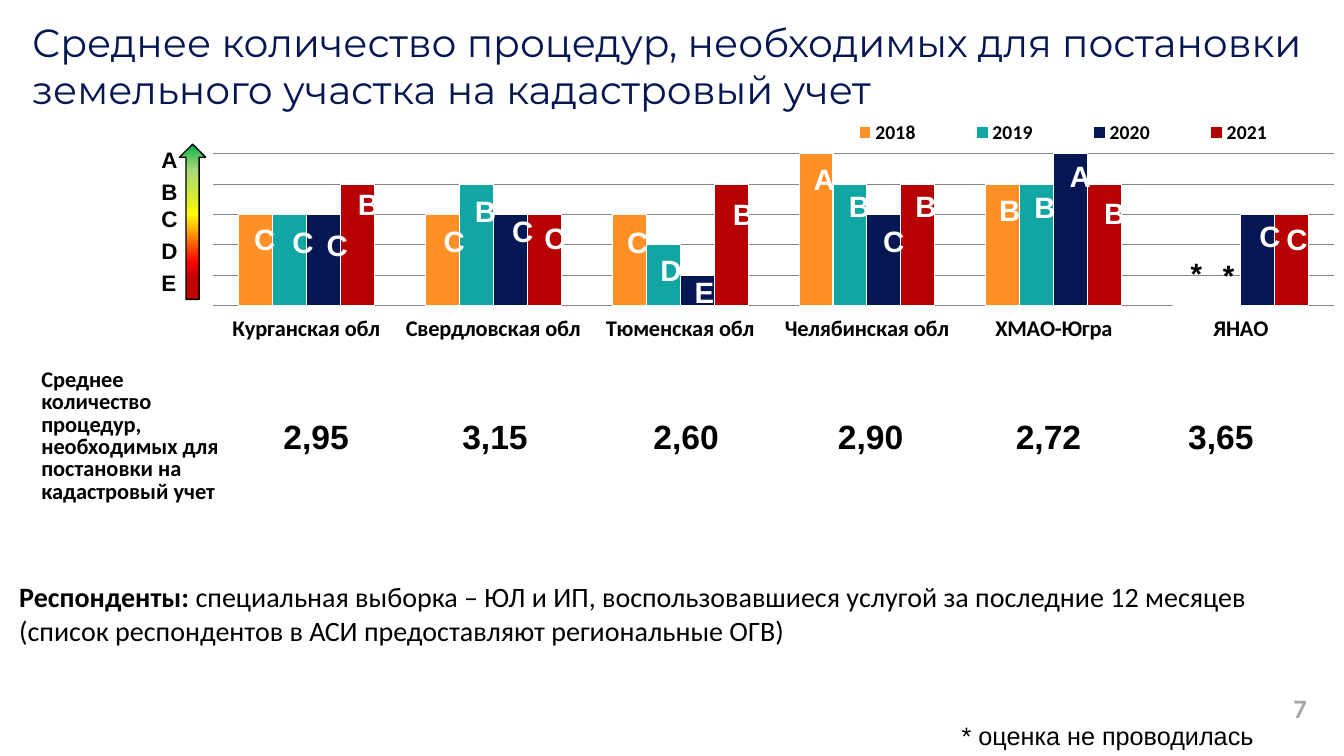
from lxml.etree import SubElement
from pptx import Presentation
from pptx.chart.data import CategoryChartData
from pptx.dml.color import RGBColor
from pptx.enum.chart import XL_CHART_TYPE, XL_LEGEND_POSITION, XL_TICK_LABEL_POSITION, XL_TICK_MARK
from pptx.enum.shapes import MSO_SHAPE
from pptx.enum.text import MSO_ANCHOR, PP_ALIGN
from pptx.oxml import parse_xml
from pptx.oxml.ns import nsdecls, qn
from pptx.util import Pt

PX = 9144  # 100 px to the inch
BLACK = RGBColor(0, 0, 0)
WHITE = RGBColor(255, 255, 255)
GRAY = RGBColor(0xA6, 0xA6, 0xA6)
GRID = RGBColor(0x86, 0x86, 0x86)
NAVY = RGBColor(0x04, 0x17, 0x52)
ORANGE = RGBColor(0xFF, 0x90, 0x28)
TEAL = RGBColor(0x10, 0xA6, 0xA4)
RED = RGBColor(0xB7, 0x00, 0x02)

deck = Presentation()
deck.slide_width, deck.slide_height = 1333 * PX, 750 * PX
slide = deck.slides.add_slide(deck.slide_layouts[6])
shapes = slide.shapes


def write(text, box=None, cell=None, size=16, font="Arial", color=BLACK, bold=False,
          align=PP_ALIGN.LEFT, anchor=MSO_ANCHOR.TOP, pad=(13, 7), lead=None):
    """Put text in a new box or a table cell; text before a bar is bold."""
    if cell is None:
        frame = shapes.add_textbox(*[n * PX for n in box]).text_frame
        frame.word_wrap = True
    else:
        frame = cell.text_frame
    host = cell or frame
    host.vertical_anchor = anchor
    host.margin_left = host.margin_right = pad[0] * PX
    host.margin_top = host.margin_bottom = pad[1] * PX
    para = frame.paragraphs[0]
    para.alignment = align
    if lead:
        para.line_spacing = Pt(lead)
    parts = text.split("|")
    for i, part in enumerate(parts):
        run = para.add_run()
        run.text = part
        run.font.size, run.font.name = Pt(size), font
        run.font.bold = bold or i < len(parts) - 1
        run.font.color.rgb = color


def place(node, **spots):
    """Fix the layout of a chart part, in shares of the chart."""
    for old in node.findall(qn("c:layout")):
        node.remove(old)
    layout = parse_xml(f'<c:layout {nsdecls("c")}><c:manualLayout/></c:layout>')
    for tag, val in spots.items():
        SubElement(layout[0], qn("c:" + tag)).set("val", str(val))
    return layout


# Chart
years = {
    "2018": (ORANGE, (60, 60, 60, 100, 80, 0)),
    "2019": (TEAL, (60, 80, 40, 80, 80, 0)),
    "2020": (NAVY, (60, 60, 20, 60, 100, 60)),
    "2021": (RED, (80, 60, 80, 80, 80, 60)),
}
data = CategoryChartData()
data.categories = ["Курганская обл", "Свердловская обл", "Тюменская обл",
                   "Челябинская обл", "ХМАО-Югра", "ЯНАО"]
for year, (_, vals) in years.items():
    data.add_series(year, vals)
chart = shapes.add_chart(XL_CHART_TYPE.COLUMN_CLUSTERED, 69 * PX, 52 * PX,
                         1280 * PX, 337 * PX, data).chart
chart.has_title = False
chart.font.size, chart.font.name, chart.font.color.rgb = Pt(18), "Calibri", BLACK

plot = chart.plots[0]
plot.gap_width, plot.overlap, plot.vary_by_categories = 150, 0, False
for bars, (color, _) in zip(plot.series, years.values()):
    bars.format.fill.solid()
    bars.format.fill.fore_color.rgb = color
    bars.format.line.color.rgb = WHITE
    bars.format.line.width = Pt(0.75)

names = chart.category_axis
names.major_tick_mark = XL_TICK_MARK.NONE
names.tick_label_position = XL_TICK_LABEL_POSITION.LOW
names.format.line.fill.background()
names.tick_labels.font.size, names.tick_labels.font.bold = Pt(16), True

scale = chart.value_axis
scale.minimum_scale, scale.maximum_scale, scale.major_unit = 0, 100, 20
scale.has_major_gridlines = True
scale.major_gridlines.format.line.color.rgb = GRID
scale.major_gridlines.format.line.width = Pt(0.75)
scale.visible = False

chart.has_legend = True
key = chart.legend
key.position, key.include_in_layout = XL_LEGEND_POSITION.BOTTOM, False
key.font.size, key.font.bold = Pt(14), True
node = key._element
node.find(qn("c:legendPos")).addnext(
    place(node, xMode="edge", yMode="edge", x=0.57, y=0.19, w=0.4, h=0.09))
area = chart._chartSpace.chart.plotArea
area.insert(0, place(area, layoutTarget="inner", xMode="edge", yMode="edge",
                     x=0.111, y=0.299, w=0.869, h=0.447))

# Grade arrow
arrow = shapes.add_shape(MSO_SHAPE.DOWN_ARROW, 178 * PX, 143 * PX, 26 * PX, 154 * PX)
arrow.rotation = 180
arrow.shadow.inherit = False
arrow.line.color.rgb, arrow.line.width = BLACK, Pt(1)
arrow.fill.gradient()
arrow.fill.gradient_angle = 270
stops = arrow._element.spPr.find(qn("a:gradFill")).find(qn("a:gsLst"))
for stop in list(stops):
    stops.remove(stop)
for pos, tone, alpha in ((15, "C00000", 100), (24, "FF0000", 100), (55, "FFFF00", 100),
                         (83, "92D050", 76), (100, "00B050", 100)):
    stop = SubElement(stops, qn("a:gs"), pos=str(pos * 1000))
    paint = SubElement(stop, qn("a:srgbClr"), val=tone)
    SubElement(paint, qn("a:alpha"), val=str(alpha * 1000))

# Grade scale
for grade, y in zip("ABCDE", (138, 170, 197, 228, 260)):
    write(grade, (147, y, 27, 40), bold=True, align=PP_ALIGN.CENTER)

# Grades on the bars: one row a region, one spot a year
grades = {100: "A", 80: "B", 60: "C", 40: "D", 20: "E", 0: "*"}
spots = (
    ((239, 212), (277, 215), (311, 218), (342, 178)),
    ((427, 214), (458, 185), (495, 204), (527, 211)),
    ((609, 215), (642, 243), (676, 265), (714, 188)),
    ((794, 153), (829, 180), (863, 214), (895, 180)),
    ((978, 184), (1013, 181), (1048, 150), (1082, 187)),
    ((1168, 246), (1200, 248), (1236, 209), (1263, 212)),
)
for i, row in enumerate(spots):
    for (x, y), (_, vals) in zip(row, years.values()):
        write(grades[vals[i]], (x, y, 27, 49), size=21, bold=True,
              color=WHITE if vals[i] else BLACK, align=PP_ALIGN.CENTER)

# Title
write("Среднее количество процедур, необходимых для постановки земельного участка "
      "на кадастровый учет", (19, 11, 1333, 108), size=28, font="Montserrat", color=NAVY)

# Table of averages
widths = (208, 155, 200, 179, 187, 166, 176)
table = shapes.add_table(1, len(widths), 28 * PX, 361 * PX,
                         sum(widths) * PX, 147 * PX).table
table.first_row = table.horz_banding = False
for col, width in zip(table.columns, widths):
    col.width = width * PX
cells = list(table.rows[0].cells)
for cell in cells:
    cell.fill.background()
write("Среднее количество процедур, необходимых для постановки на кадастровый учет",
      cell=cells[0], font="Calibri", bold=True, lead=16)
for cell, mean in zip(cells[1:], ("2,95", "3,15", "2,60", "2,90", "2,72", "3,65")):
    write(mean, cell=cell, size=24, bold=True, align=PP_ALIGN.CENTER,
          anchor=MSO_ANCHOR.MIDDLE)

# Notes at the foot and page number
write("Респонденты:| специальная выборка – ЮЛ и ИП, воспользовавшиеся услугой за последние "
      "12 месяцев (список респондентов в АСИ предоставляют региональные ОГВ)",
      (6, 568, 1312, 114), size=20, font="Calibri")
write("* оценка не проводилась", (944, 710, 326, 40), size=18, pad=(10, 5))
write("7", (1249, 682, 60, 40), size=19, font="Calibri", color=GRAY, bold=True,
      align=PP_ALIGN.RIGHT, anchor=MSO_ANCHOR.MIDDLE)

deck.save("out.pptx")
